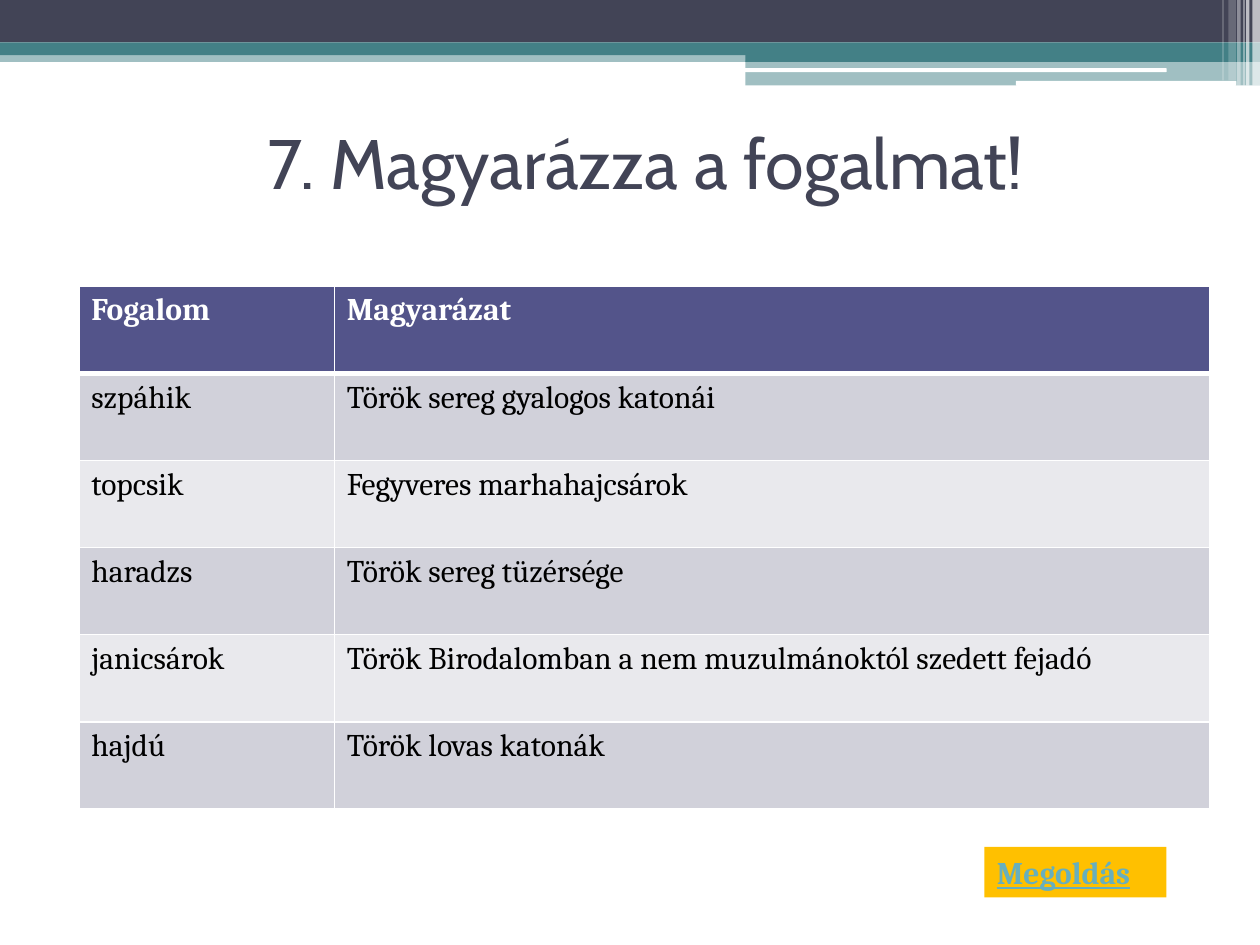
from dataclasses import dataclass

import lxml.etree
import pptx
import pptx.dml.color
import pptx.enum.shapes
import pptx.enum.text
import pptx.oxml.ns
import pptx.util

Pt = pptx.util.Pt
Color = pptx.dml.color.RGBColor.from_string
Shape = pptx.enum.shapes.MSO_SHAPE
Align = pptx.enum.text.PP_ALIGN
Anchor = pptx.enum.text.MSO_ANCHOR
qn = pptx.oxml.ns.qn


@dataclass(frozen=True)
class Theme:
    white: str = "FFFFFF"
    black: str = "000000"
    dark: str = "424456"
    teal: str = "438086"
    head: str = "53548A"
    odd: str = "D1D1DA"
    even: str = "E9E9ED"
    gold: str = "FFC000"
    link: str = "67AFBD"
    sans: str = "Cabin"
    serif: str = "Cambria"
    large: int = 40
    small: int = 18


@dataclass(frozen=True)
class Band:
    left: float
    top: float
    width: float
    height: float
    color: str
    alpha: int = 100
    kind: int = Shape.RECTANGLE


THEME = Theme()
WIDTH, HEIGHT = 720, 540
STEP = 426  # where the lower bands begin
ROUND = Shape.ROUNDED_RECTANGLE

BANDS = [
    Band(0, 28.8, WIDTH, 6.6, THEME.teal, 50),
    Band(0, 0, WIDTH, 24.3, THEME.dark),
    Band(0, 24.3, WIDTH, 7.2, THEME.teal),
    Band(STEP, 28.2, WIDTH - STEP, 7.2, THEME.teal),
    Band(STEP, 34.6, WIDTH - STEP, 14.2, THEME.teal, 50),
    Band(425.5, 39, 241.2, 2.2, THEME.white, kind=ROUND),
    Band(580.5, 46.2, 126, 2.8, THEME.white, kind=ROUND),
]
# Thin stripes at the right edge: left, width, height, alpha
STRIPES = [
    (715.6, 4.4, 49, 65),
    (712, 2, 49, 65),
    (710.5, 0.7, 49, 60),
    (707, 2, 49, 40),
    (702, 4.3, 46, 20),
    (698.5, 0.7, 46, 30),
]
BANDS += [Band(x, 0, w, h, THEME.white, alpha) for x, w, h, alpha in STRIPES]

TERMS = [
    ("Fogalom", "Magyarázat"),
    ("szpáhik", "Török sereg gyalogos katonái"),
    ("topcsik", "Fegyveres marhahajcsárok"),
    ("haradzs", "Török sereg tüzérsége"),
    ("janicsárok", "Török Birodalomban a nem muzulmánoktól szedett fejadó"),
    ("hajdú", "Török lovas katonák"),
]
COLUMNS = (146, 500.5)
ROW = 49.8


def write(frame, text: str, color: str, **style) -> None:
    """Put one styled run in the first paragraph of a text frame."""
    run = frame.paragraphs[0].add_run()
    run.text = text
    base = {"name": THEME.serif, "size": Pt(THEME.small), "bold": False}
    for key, value in (base | style).items():
        setattr(run.font, key, value)
    run.font.color.rgb = Color(color)


def draw(slide, band: Band):
    shape = slide.shapes.add_shape(
        band.kind, Pt(band.left), Pt(band.top), Pt(band.width), Pt(band.height))
    shape.shadow.inherit = False
    shape.line.fill.background()
    shape.fill.solid()
    shape.fill.fore_color.rgb = Color(band.color)
    if band.alpha < 100:
        tint = shape.fill._xPr.find(".//" + qn("a:srgbClr"))
        lxml.etree.SubElement(tint, qn("a:alpha"), val=str(band.alpha * 1000))
    return shape


def edge(cell, sides: dict[str, float]) -> None:
    """Add white borders; they must come before the fill in the cell."""
    props = cell._tc.get_or_add_tcPr()
    for spot, (side, width) in enumerate(sides.items()):
        line = props.makeelement(qn("a:ln" + side), {"w": str(Pt(width))})
        solid = lxml.etree.SubElement(line, qn("a:solidFill"))
        lxml.etree.SubElement(solid, qn("a:srgbClr"), val=THEME.white)
        props.insert(spot, line)


def add_title(slide) -> None:
    title = slide.shapes.title
    place = {"left": 45, "top": 50.4, "width": 648, "height": 84}
    for key, value in place.items():
        setattr(title, key, Pt(value))
    frame = title.text_frame
    frame.vertical_anchor = Anchor.MIDDLE
    frame.paragraphs[0].alignment = Align.CENTER
    write(frame, "7. Magyarázza a fogalmat!", THEME.dark,
          name=THEME.sans, size=Pt(THEME.large))


def add_terms(slide) -> None:
    table = slide.shapes.add_table(
        len(TERMS), len(COLUMNS), Pt(45), Pt(163.6),
        Pt(sum(COLUMNS)), Pt(ROW * len(TERMS))).table
    for column, width in zip(table.columns, COLUMNS):
        column.width = Pt(width)
    for r, texts in enumerate(TERMS):
        table.rows[r].height = Pt(ROW)
        first = r == 0
        fill = THEME.head if first else (THEME.even, THEME.odd)[r % 2]
        sides = {"L": 1, "R": 1, "T": 3 if r == 1 else 1, "B": 3 if first else 1}
        for c, text in enumerate(texts):
            cell = table.cell(r, c)
            cell.fill.solid()
            cell.fill.fore_color.rgb = Color(fill)
            edge(cell, sides)
            write(cell.text_frame, text,
                  THEME.white if first else THEME.black, bold=first)


def add_button(slide) -> None:
    button = draw(slide, Band(562.5, 484, 104, 28.8, THEME.gold))
    frame = button.text_frame
    frame.word_wrap = False
    frame.vertical_anchor = Anchor.TOP
    frame.paragraphs[0].alignment = Align.LEFT
    write(frame, "Megoldás", THEME.link, bold=True, underline=True)


def main() -> None:
    deck = pptx.Presentation()
    deck.slide_width, deck.slide_height = Pt(WIDTH), Pt(HEIGHT)
    slide = deck.slides.add_slide(deck.slide_layouts.get_by_name("Title Only"))
    for band in BANDS:
        draw(slide, band)
    add_title(slide)
    add_button(slide)
    add_terms(slide)
    deck.save("out.pptx")


if __name__ == "__main__":
    main()
